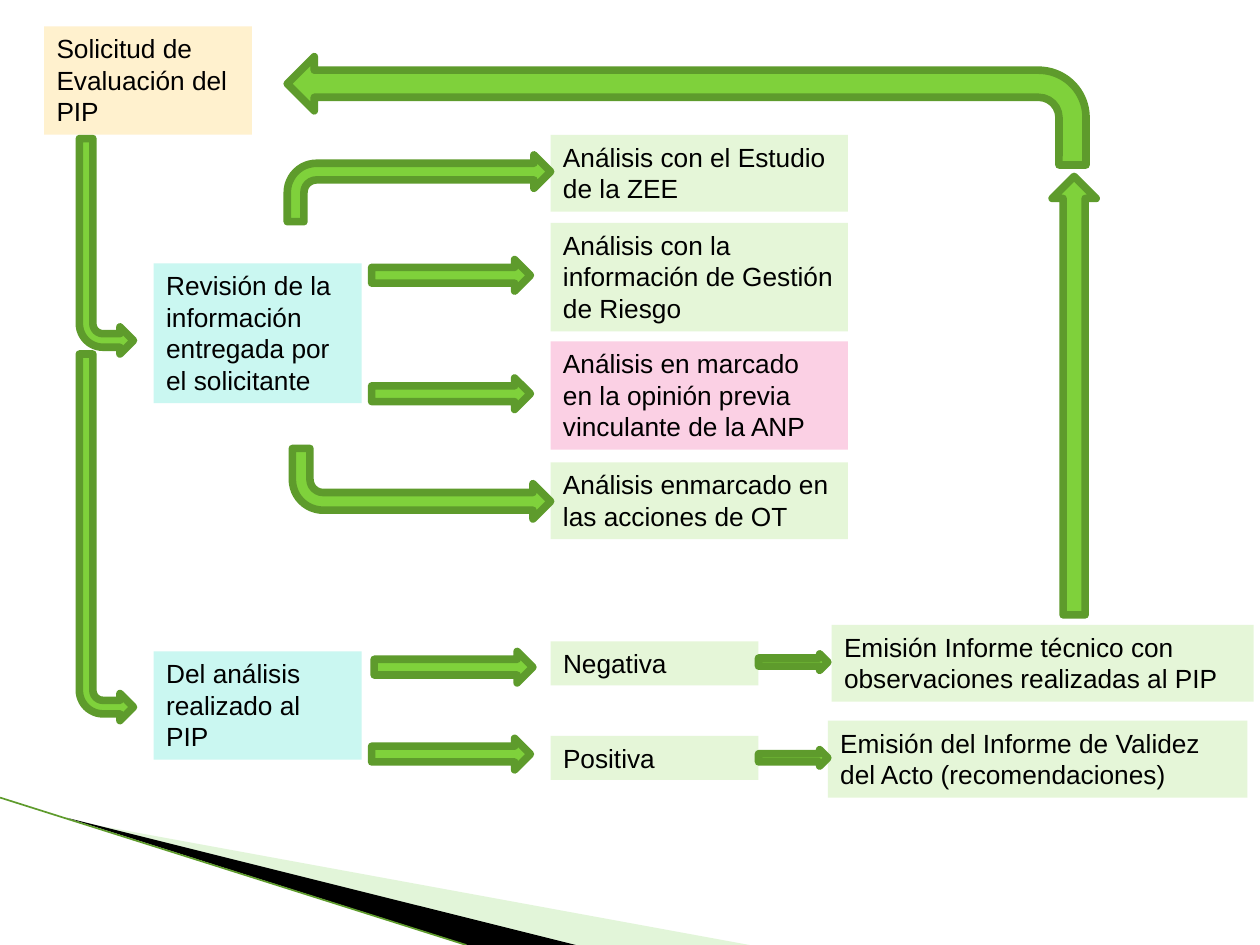
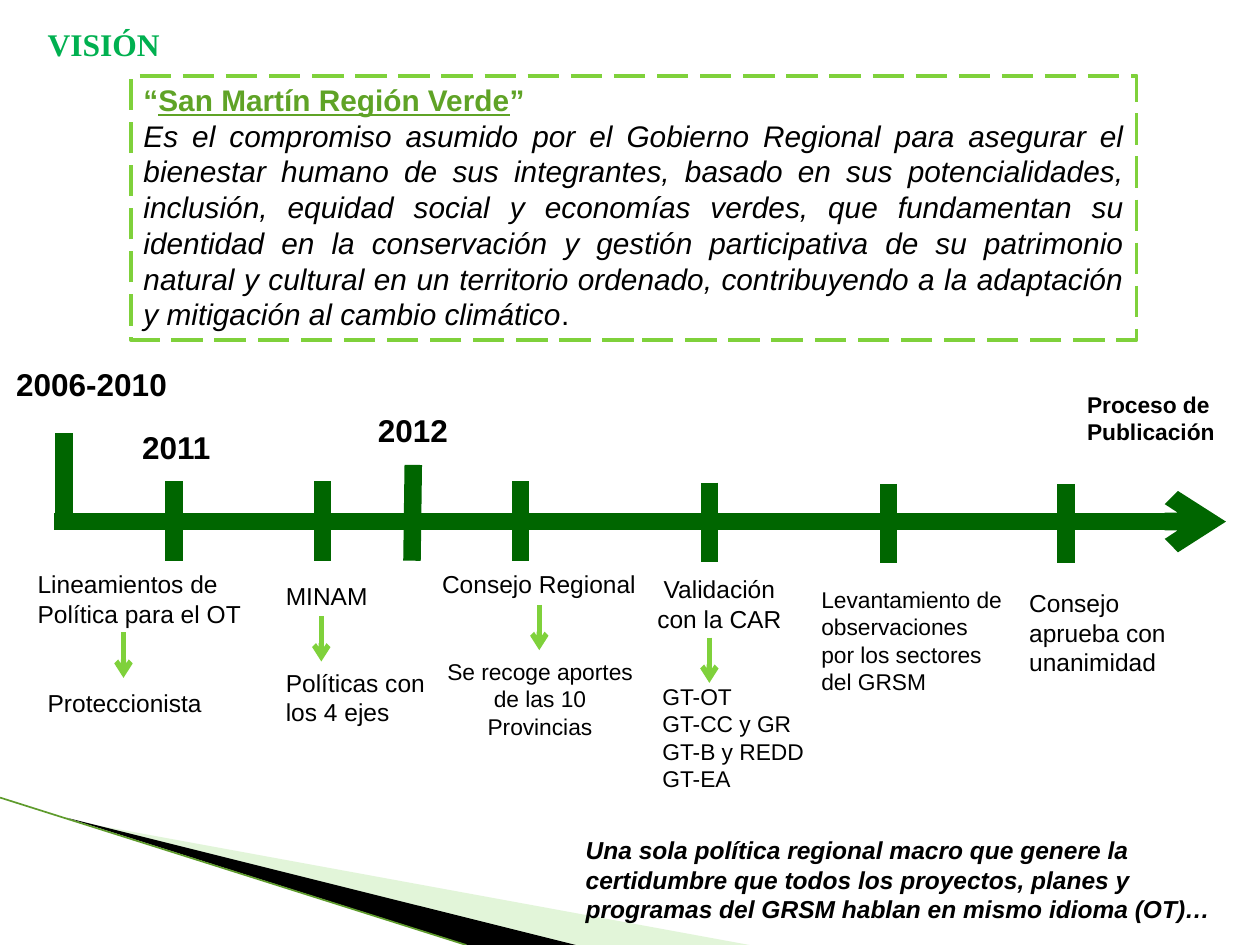
from dataclasses import dataclass

from lxml import etree
from pptx import Presentation
from pptx import util as u
from pptx.dml.color import RGBColor
from pptx.enum import dml, shapes, text
from pptx.oxml import ns

PX = 9144  # 100 px to the inch


@dataclass(frozen=True)
class Theme:
    black: str = "000000"
    green: str = "7FD13B"
    edge: str = "5E9B2C"
    heading: str = "5FA326"
    title: str = "00B050"
    timeline: str = "006600"
    wedge: str = "B8E7A1"
    request: str = "FFF1CE"
    review: str = "CAF7F1"
    analysis: str = "E5F6D8"
    protected: str = "FBD0E4"
    font: str = "Arial"
    title_font: str = "Times New Roman"
    year: int = 18
    vision: int = 17
    box: int = 15
    label: int = 14
    small: int = 13


theme = Theme()
LEFT, CENTER, JUSTIFY = text.PP_ALIGN.LEFT, text.PP_ALIGN.CENTER, text.PP_ALIGN.JUSTIFY


def write(frame, content, size, color=theme.black, font=theme.font, bold=False,
          italic=False, underline=False, align=LEFT, wrap=True, same_line=False):
    """Write one paragraph per line, or go on in the last paragraph."""
    frame.word_wrap = wrap
    frame.vertical_anchor = text.MSO_ANCHOR.TOP
    for line in content.split("\n"):
        paragraph = frame.paragraphs[-1]
        if paragraph.runs and not same_line:
            paragraph = frame.add_paragraph()
        paragraph.alignment = align
        run = paragraph.add_run()
        run.text = line
        run.font.name, run.font.size = font, u.Pt(size)
        run.font.bold, run.font.italic, run.font.underline = bold, italic, underline
        run.font.color.rgb = RGBColor.from_string(color)


def draw_line(slide, start, end, color, width, arrow=False):
    connector = slide.shapes.add_connector(
        shapes.MSO_CONNECTOR.STRAIGHT, *(value * PX for value in (*start, *end)))
    connector.line.color.rgb = RGBColor.from_string(color)
    connector.line.width = u.Pt(width)
    properties = connector._element.spPr
    if arrow:
        etree.SubElement(properties.find(ns.qn("a:ln")), ns.qn("a:tailEnd"), type="arrow")
    etree.SubElement(properties, ns.qn("a:effectLst"))


presentation = Presentation()
presentation.slide_width, presentation.slide_height = 1000 * PX, 750 * PX
process, vision = [presentation.slides.add_slide(presentation.slide_layouts[6])
                   for _ in range(2)]

# Corner band shared by both slides
wedges = [
    ([(55, 651), (595, 750), (456, 750)], theme.wedge, 40),
    ([(53, 649), (457, 750), (371, 750)], theme.black, 100),
]
for slide in (process, vision):
    for points, color, opacity in wedges:
        builder = slide.shapes.build_freeform(*points[0], scale=PX)
        builder.add_line_segments(points[1:], close=True)
        wedge = builder.convert_to_shape()
        wedge.shadow.inherit = False
        wedge.fill.solid()
        wedge.fill.fore_color.rgb = RGBColor.from_string(color)
        wedge.line.fill.background()
        if opacity < 100:
            tint = wedge._element.spPr.find(".//" + ns.qn("a:srgbClr"))
            etree.SubElement(tint, ns.qn("a:alpha"), val=str(opacity * 1000))
    draw_line(slide, (0, 633), (370, 750), theme.edge, 0.95)

# Slide 1: evaluation process
steps = [
    (35, 21, 165, 86, theme.request, "Solicitud de Evaluación del PIP"),
    (122, 209, 165, 111, theme.review,
     "Revisión de la información entregada por el solicitante"),
    (122, 517, 165, 86, theme.review, "Del análisis realizado al PIP"),
    (437, 107, 236, 61, theme.analysis, "Análisis con el Estudio de la ZEE"),
    (437, 177, 236, 86, theme.analysis, "Análisis con la información de Gestión de Riesgo"),
    (437, 271, 236, 86, theme.protected,
     "Análisis en marcado en la opinión previa vinculante de la ANP"),
    (437, 367, 236, 61, theme.analysis, "Análisis enmarcado en las acciones de OT"),
    (437, 509, 165, 35, theme.analysis, "Negativa"),
    (437, 584, 165, 35, theme.analysis, "Positiva"),
    (660, 496, 335, 61, theme.analysis,
     "Emisión Informe técnico con observaciones realizadas al PIP"),
    (657, 572, 333, 61, theme.analysis,
     "Emisión del Informe de Validez del Acto (recomendaciones)"),
]
for left, top, width, height, color, content in steps:
    step = process.shapes.add_shape(
        shapes.MSO_SHAPE.RECTANGLE, left * PX, top * PX, width * PX, height * PX)
    step.shadow.inherit = False
    step.fill.solid()
    step.fill.fore_color.rgb = RGBColor.from_string(color)
    step.line.fill.background()
    write(step.text_frame, content, theme.box)

BENT, RIGHT = shapes.MSO_SHAPE.BENT_ARROW, shapes.MSO_SHAPE.RIGHT_ARROW
arrows = [
    (BENT, 228, 123, 209, 53, None),
    (BENT, 232, 356, 205, 56, "flipV"),
    (BENT, 63, 110, 43, 171, "flipV"),
    (BENT, 63, 281, 43, 291, "flipV"),
    (BENT, 228, 45, 634, 86, "flipH"),
    (RIGHT, 295, 206, 126, 25, None),
    (RIGHT, 295, 300, 126, 25, None),
    (RIGHT, 297, 517, 126, 25, None),
    (RIGHT, 295, 586, 126, 25, None),
    (RIGHT, 602, 519, 55, 13, None),
    (RIGHT, 602, 595, 55, 13, None),
    (shapes.MSO_SHAPE.UP_ARROW, 835, 140, 35, 348, None),
]
for kind, left, top, width, height, flip in arrows:
    arrow = process.shapes.add_shape(kind, left * PX, top * PX, width * PX, height * PX)
    arrow.shadow.inherit = False
    arrow.fill.solid()
    arrow.fill.fore_color.rgb = RGBColor.from_string(theme.green)
    arrow.line.color.rgb = RGBColor.from_string(theme.edge)
    arrow.line.width = u.Pt(4.33)
    if flip:
        arrow._element.spPr.xfrm.set(flip, "1")

# Slide 2: vision statement
statement = vision.shapes.add_shape(
    shapes.MSO_SHAPE.RECTANGLE, 104 * PX, 60 * PX, 798 * PX, 210 * PX)
statement.shadow.inherit = False
statement.fill.background()
statement.line.color.rgb = RGBColor.from_string(theme.green)
statement.line.width = u.Pt(2.25)
statement.line.dash_style = dml.MSO_LINE.LONG_DASH
heading = dict(size=theme.vision, color=theme.heading, bold=True)
write(statement.text_frame, "“", **heading)
write(statement.text_frame, "San Martín Región Verde", underline=True, same_line=True, **heading)
write(statement.text_frame, "”", same_line=True, **heading)
write(statement.text_frame,
      "Es el compromiso asumido por el Gobierno Regional para asegurar el bienestar humano "
      "de sus integrantes, basado en sus potencialidades, inclusión, equidad social y "
      "economías verdes, que fundamentan su identidad en la conservación y gestión "
      "participativa de su patrimonio natural y cultural en un territorio ordenado, "
      "contribuyendo a la adaptación y mitigación al cambio climático",
      theme.vision, italic=True, align=JUSTIFY)
write(statement.text_frame, ".", theme.vision, align=JUSTIFY, same_line=True)

# Slide 2: timeline
draw_line(vision, (43, 414), (973, 414), theme.timeline, 10, arrow=True)
for x, top, foot, bottom in [(51, 344, 51, 407), (138, 382, 138, 445), (256, 382, 256, 445),
                             (328, 369, 327, 445), (413, 382, 413, 445), (563, 383, 563, 446),
                             (705, 384, 705, 447), (846, 384, 846, 447)]:
    draw_line(vision, (x, top), (foot, bottom), theme.timeline, 10)
for x, top in [(98, 502), (255, 489), (428, 480), (563, 506)]:
    draw_line(vision, (x, top), (x, top + 36), theme.green, 3, arrow=True)

year = dict(size=theme.year, bold=True, wrap=False)
label = dict(size=theme.label)
single = dict(size=theme.label, wrap=False)
small = dict(size=theme.small)
captions = [
    (28, 15, 187, 40, "VISIÓN",
     dict(size=theme.year, color=theme.title, font=theme.title_font, bold=True)),
    (3, 285, 141, 40, "2006-2010", year),
    (103, 335, 74, 40, "2011", year),
    (290, 321, 76, 40, "2012", year),
    (853, 305, 127, 54, "Proceso de Publicación", dict(small, bold=True)),
    (20, 447, 192, 57, "Lineamientos de Política para el OT", label),
    (28, 541, 143, 34, "Proteccionista", single),
    (217, 456, 86, 34, "MINAM", single),
    (217, 525, 133, 57, "Políticas con los 4 ejes", label),
    (341, 447, 175, 34, "Consejo Regional", single),
    (341, 517, 175, 76, "Se recoge aportes de las 10 Provincias", dict(small, align=CENTER)),
    (508, 451, 126, 57, "Validación con la CAR", dict(label, align=CENTER)),
    (516, 537, 150, 98, "GT-OT\nGT-CC y GR\nGT-B y REDD\nGT-EA", small),
    (642, 460, 165, 98, "Levantamiento de observaciones por los sectores del GRSM", small),
    (807, 462, 133, 81, "Consejo aprueba con unanimidad", label),
    (455, 658, 543, 81,
     "Una sola política regional macro que genere la certidumbre que todos los proyectos, "
     "planes y programas del GRSM hablan en mismo idioma (OT)…",
     dict(label, bold=True, italic=True)),
]
for left, top, width, height, content, style in captions:
    caption = vision.shapes.add_textbox(left * PX, top * PX, width * PX, height * PX)
    write(caption.text_frame, content, **style)

presentation.save("out.pptx")
